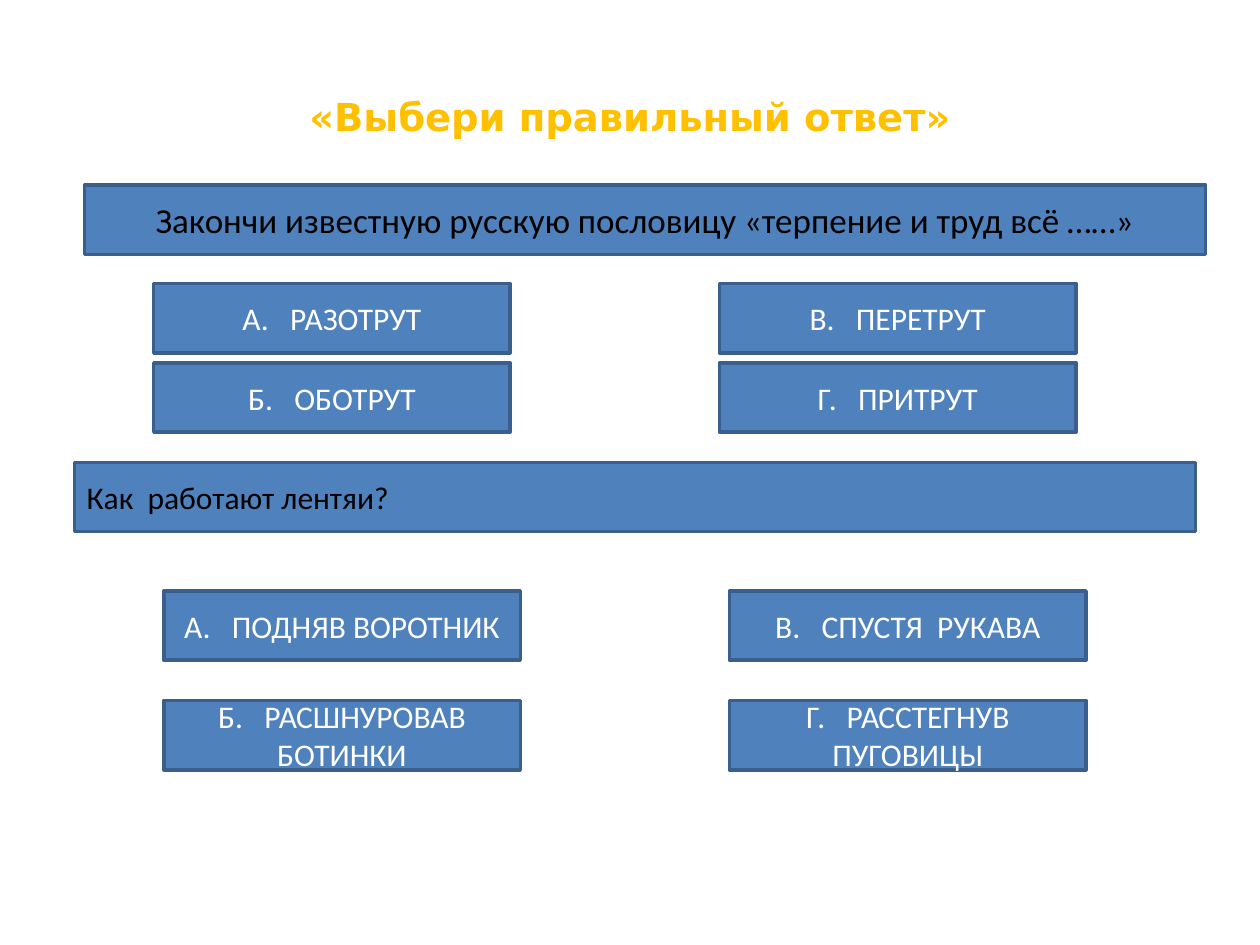
from pptx import Presentation
from pptx.dml.color import RGBColor
from pptx.enum.shapes import MSO_SHAPE
from pptx.enum.text import MSO_ANCHOR, PP_ALIGN
from pptx.util import Inches, Pt

RECTANGLE = MSO_SHAPE.RECTANGLE
MIDDLE = MSO_ANCHOR.MIDDLE
LEFT, CENTER = PP_ALIGN.LEFT, PP_ALIGN.CENTER

BLUE = RGBColor(0x4F, 0x81, 0xBD)
DARK_BLUE = RGBColor(0x3A, 0x5F, 0x8C)
GOLD = RGBColor(0xFF, 0xC0, 0x00)
BLACK = RGBColor(0x00, 0x00, 0x00)
WHITE = RGBColor(0xFF, 0xFF, 0xFF)

BAR_HEIGHT = Inches(0.55)
QUESTION_WIDTH = Inches(8.9)
ANSWER_WIDTH = Inches(2.83)
ANSWER_COLUMN_STEP = Inches(4.49)


def write_text(frame, text, font_name, size, color, align, bold=False):
    """Fill a text frame with one vertically centred paragraph."""
    frame.word_wrap = True
    frame.vertical_anchor = MIDDLE
    paragraph = frame.paragraphs[0]
    paragraph.text = text
    paragraph.alignment = align
    font = paragraph.font
    font.name, font.size, font.bold = font_name, Pt(size), bold
    font.color.rgb = color


def add_title(slide, text, left, top, width, height):
    """Place and format the slide title."""
    title = slide.shapes.title
    title.left, title.top, title.width, title.height = left, top, width, height
    write_text(title.text_frame, text, "DejaVu Sans", 22, GOLD, CENTER, bold=True)


def add_bar(slide, text, left, top, width, size, color, align):
    """Draw one blue bar with its text."""
    bar = slide.shapes.add_shape(RECTANGLE, left, top, width, BAR_HEIGHT)
    bar.shadow.inherit = False
    bar.fill.solid()
    bar.fill.fore_color.rgb = BLUE
    bar.line.color.rgb = DARK_BLUE
    bar.line.width = Pt(2)
    write_text(bar.text_frame, text, "Calibri", size, color, align)


def add_question(slide, text, left, top, size, align):
    """Draw the wide question bar."""
    add_bar(slide, text, left, top, QUESTION_WIDTH, size, BLACK, align)


def add_answers(slide, answers, left, top, row_step):
    """Lay four lettered answers out in two columns, filled column by column."""
    for index, (letter, answer) in enumerate(zip("АБВГ", answers)):
        column, row = divmod(index, 2)
        add_bar(slide, f"{letter}.   {answer}", left + column * ANSWER_COLUMN_STEP,
                top + row * row_step, ANSWER_WIDTH, 18, WHITE, CENTER)


def main():
    """Build the quiz slide and save it."""
    presentation = Presentation()
    presentation.slide_width, presentation.slide_height = Inches(10), Inches(7.5)
    slide = presentation.slides.add_slide(presentation.slide_layouts[5])

    add_title(slide, "«Выбери правильный ответ»",
              Inches(0.5), Inches(0.3), Inches(9), Inches(1.25))

    add_question(slide, "Закончи известную русскую пословицу «терпение и труд всё ……»",
                 Inches(0.67), Inches(1.47), 20, CENTER)
    add_answers(slide, ["РАЗОТРУТ", "ОБОТРУТ", "ПЕРЕТРУТ", "ПРИТРУТ"],
                Inches(1.22), Inches(2.25), Inches(0.63))

    add_question(slide, "Как  работают лентяи?", Inches(0.59), Inches(3.67), 18, LEFT)
    add_answers(slide, ["ПОДНЯВ ВОРОТНИК", "РАСШНУРОВАВ БОТИНКИ",
                        "СПУСТЯ  РУКАВА", "РАССТЕГНУВ ПУГОВИЦЫ"],
                Inches(1.3), Inches(4.69), Inches(0.87))

    presentation.save("out.pptx")


if __name__ == "__main__":
    main()
